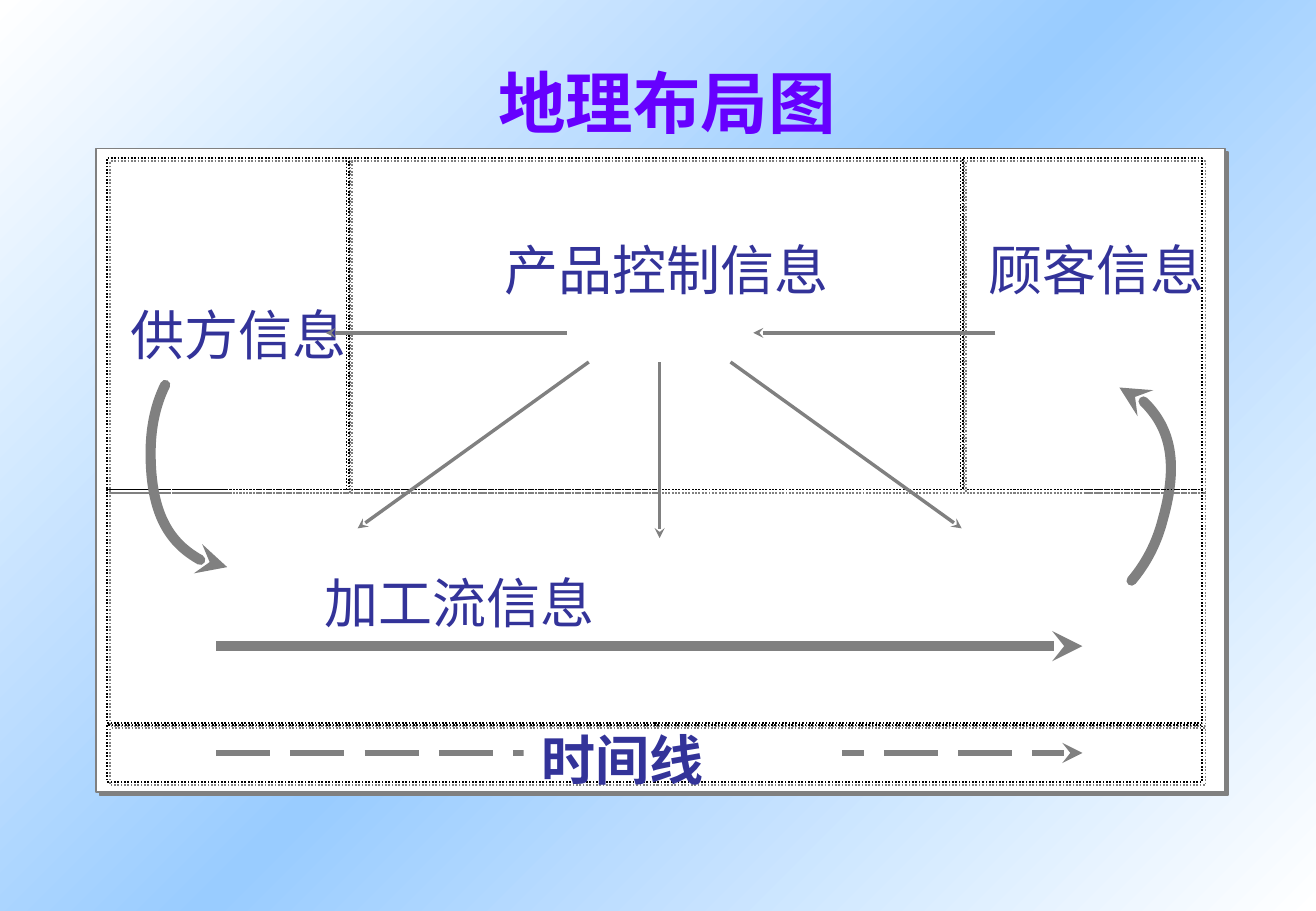
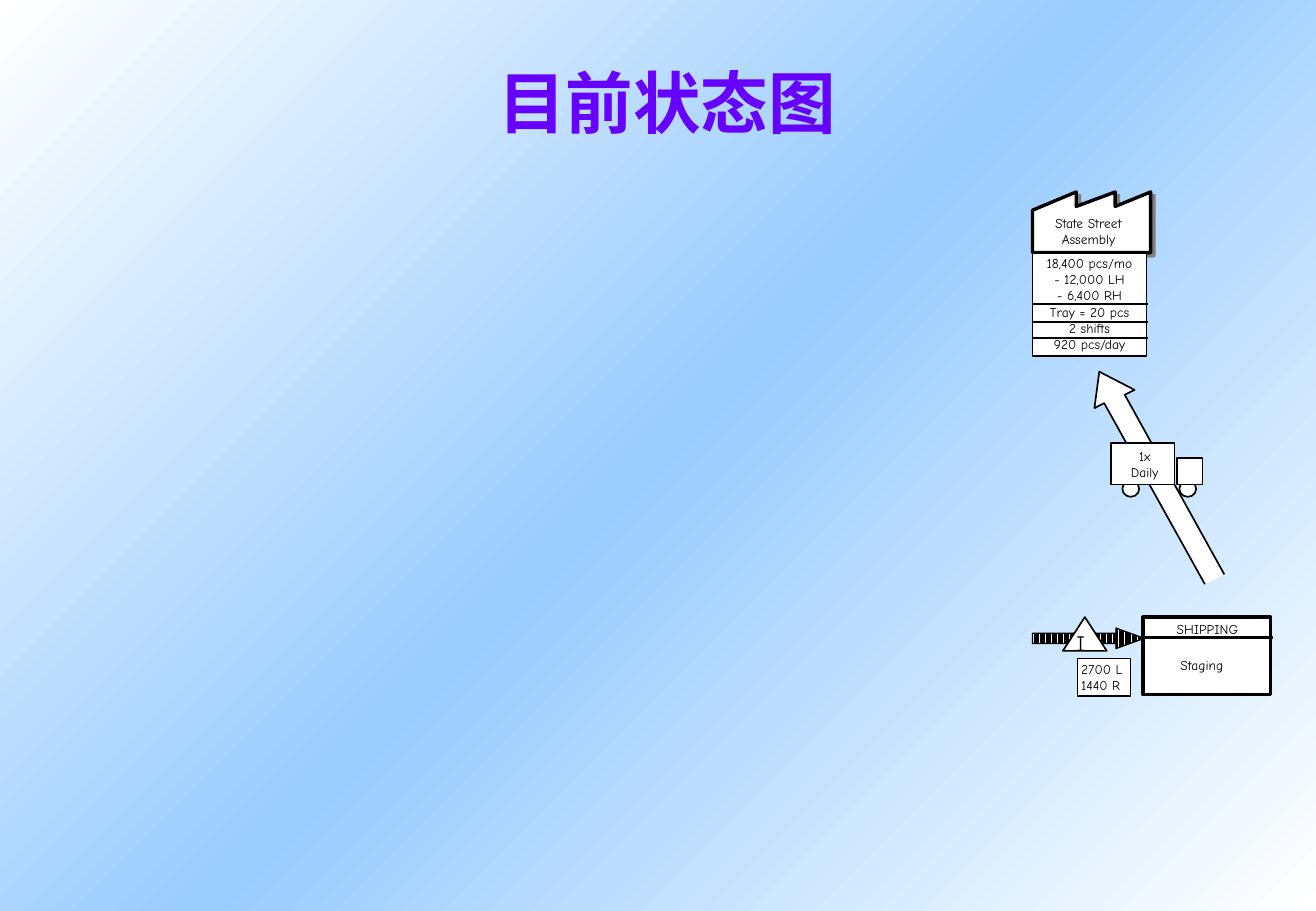
from copy import deepcopy

from lxml.etree import SubElement
from pptx import Presentation
from pptx.dml.color import RGBColor
from pptx.enum.dml import MSO_LINE, MSO_PATTERN
from pptx.enum.shapes import MSO_CONNECTOR, MSO_SHAPE
from pptx.enum.text import MSO_ANCHOR, PP_ALIGN
from pptx.oxml.ns import qn
from pptx.util import Pt

COLORS = {
    "title": "6600FF", "label": "333399", "black": "000000",
    "white": "FFFFFF", "gray": "808080", "sky": "99CCFF",
}
TITLE_FONT, BODY_FONT = "Arial", "Comic Neue"
SMALL = (2.2, 1.4)
FRAME_BOX = (57, 88, 669, 381.5)
FACTORY_BOX = (612, 113.8, 70, 97)
DELIVERY_BOX = (648.7, 220.3, 77, 126)
SHIPPING_BOX = (612, 365.8, 142, 46)


def rgb(name):
    return RGBColor.from_string(COLORS[name])


def points(values):
    return [Pt(value) for value in values]


def inside(box, x, y, *size):
    """Shift a position given relative to box onto the page."""
    return (box[0] + x, box[1] + y, *size)


def outline(shape, color, weight, dash=None):
    shape.line.color.rgb = rgb(color)
    shape.line.width = Pt(weight)
    if dash:
        shape.line.dash_style = dash


def add_tip(shape):
    """Put a stealth arrowhead on the end of a line."""
    SubElement(shape._element.spPr.find(qn("a:ln")), qn("a:tailEnd"), type="stealth")


def finish(shape, fill, line, weight, dash=None, shadow=False):
    """Set fill, outline and shadow of a shape."""
    if fill:
        shape.fill.solid()
        shape.fill.fore_color.rgb = rgb(fill)
    else:
        shape.fill.background()
    if line:
        outline(shape, line, weight, dash)
    else:
        shape.line.fill.background()
    shape.shadow.inherit = False
    if shadow:
        effects = shape._element.spPr.find(qn("a:effectLst"))
        outer = SubElement(effects, qn("a:outerShdw"), dist=str(Pt(2.8)),
                           dir="2700000", algn="ctr", rotWithShape="0")
        SubElement(outer, qn("a:srgbClr"), val=COLORS["gray"])
    return shape


def add_preset(page, box, kind=MSO_SHAPE.RECTANGLE, fill="white", line="black",
               weight=1.0, **style):
    shape = page.shapes.add_shape(kind, *points(box))
    return finish(shape, fill, line, weight, **style)


def add_outline(page, box, corners, closed=True):
    """Build a freeform from corners given relative to box."""
    start, *rest = [tuple(points(inside(box, *corner))) for corner in corners]
    builder = page.shapes.build_freeform(*start, scale=1.0)
    builder.add_line_segments(rest, close=closed)
    return builder.convert_to_shape()


def add_curved_arrow(page, box, controls):
    """Draw a Bezier arrow; controls hold a start and three points per curve."""
    shape = finish(add_outline(page, box, controls, closed=False), None, "gray", 6)
    track = shape._element.find(".//" + qn("a:path"))
    steps = track.findall(qn("a:lnTo"))
    for first in range(0, len(steps), 3):
        curve = SubElement(track, qn("a:cubicBezTo"))
        for step in steps[first:first + 3]:
            curve.append(step[0])
            track.remove(step)
    shape._element.spPr.find(qn("a:ln")).set("cap", "rnd")
    add_tip(shape)


def add_line(page, box, start, end, color="black", weight=1.0, dash=None, tip=False):
    line = page.shapes.add_connector(
        MSO_CONNECTOR.STRAIGHT, *points(inside(box, *start) + inside(box, *end)))
    outline(line, color, weight, dash)
    if tip:
        add_tip(line)
    SubElement(line._element.spPr, qn("a:effectLst"))


def write(shape, text, size=8, color="black", font=BODY_FONT, bold=False,
          align=PP_ALIGN.CENTER, insets=SMALL, left=None, wrap=False,
          anchor=MSO_ANCHOR.TOP):
    frame = shape.text_frame
    frame.text = text
    frame.word_wrap = wrap
    frame.vertical_anchor = anchor
    frame.margin_left = Pt(insets[0] if left is None else left)
    frame.margin_right = Pt(insets[0])
    frame.margin_top = frame.margin_bottom = Pt(insets[1])
    for para in frame.paragraphs:
        para.alignment = align
        for span in para.runs:
            span.font.name = font
            span.font.size = Pt(size)
            span.font.bold = bold
            span.font.color.rgb = rgb(color)


def add_text(page, box, text, **style):
    write(page.shapes.add_textbox(*points(box)), text, **style)


def add_label(page, box, text, bold=False):
    """Write the large name of a region."""
    add_text(page, box, text, size=32, color="label", bold=bold,
             align=PP_ALIGN.LEFT, insets=(7.2, 3.6), left=15.2)


def style_master(deck):
    """Give every slide the diagonal sky gradient."""
    fill = deck.slide_master.background.fill
    fill.gradient()
    fill.gradient_angle = 315
    stop_list = deck.slide_master.element.find(".//" + qn("a:gsLst"))
    stop_list.insert(1, deepcopy(stop_list[0]))
    for stop, position, name in zip(fill.gradient_stops, (0, 0.5, 1),
                                    ("white", "sky", "white")):
        stop.position = position
        stop.color.rgb = rgb(name)


def add_page(deck, title):
    page = deck.slides.add_slide(deck.slide_layouts[5])
    holder = page.shapes.title
    holder.left, holder.top, holder.width, holder.height = points((30, 15, 720, 90))
    write(holder, title, size=40, color="title", font=TITLE_FONT, bold=True,
          insets=(7.2, 3.6), left=18, wrap=True, anchor=MSO_ANCHOR.MIDDLE)
    return page


def add_panel(page, box):
    add_preset(page, box, fill=None, dash=MSO_LINE.ROUND_DOT, shadow=True)


def supplier_panel(page, box):
    add_panel(page, box)
    add_label(page, inside(box, -1.5, 81.5, 152, 45), "供方信息")
    add_curved_arrow(page, box, [
        (34.6, 134.6), (28.8, 146.2), (25.9, 159.8), (25.9, 175),
        (25.9, 212.4), (46.1, 242.6), (71.3, 242.6)])


def customer_panel(page, box):
    add_panel(page, box)
    add_label(page, inside(box, 0, 43.2, 152, 45), "顾客信息")
    add_curved_arrow(page, box, [
        (100.1, 250.6), (108.7, 240.5), (115.2, 228.2), (118.8, 213.8),
        (128.9, 177.8), (117.4, 142.6), (92.9, 136.1)])


def control_panel(page, box):
    add_panel(page, box)
    add_label(page, inside(box, 77, 43.2, 216, 45), "产品控制信息")
    axis, level, top = 184.3, 103.7, 121
    arrows = [((axis - 55, level), (axis - 198, level)),
              ((axis + 199, level), (axis + 55.5, level)),
              ((axis, top), (axis, 225.4))]
    arrows += [((axis + side * 42, top), (axis + side * 179, 219.6)) for side in (-1, 1)]
    for start, end in arrows:
        add_line(page, box, start, end, "gray", 2, tip=True)


def flow_panel(page, box):
    add_panel(page, box)
    add_label(page, inside(box, 114, 44, 184, 45), "加工流信息")
    add_line(page, box, (64.8, 92.8), (578.2, 92.8), "gray", 6, tip=True)


def timeline_panel(page, box):
    add_panel(page, box)
    add_line(page, box, (64.8, 16.6), (578.2, 16.6), "gray", 4,
             dash=MSO_LINE.LONG_DASH, tip=True)
    add_preset(page, inside(box, 247, 10.8, 188.6, 11.5), line=None)
    add_label(page, inside(box, 242.6, -2.8, 124.6, 45), "时间线", bold=True)


def layout_map(page, box):
    """Frame with three panels above two full-width ones."""
    add_preset(page, box, line="gray", shadow=True)
    margin, side, gap = 6.4, 142, 1.3
    upper, middle, lower = 196.6, 138.2, 33.8
    width = box[2] - 2 * margin - 7
    centre = width - 2 * (side + gap)
    left, top = margin, 5.6
    customer_panel(page, inside(box, left + width - side, top, side, upper))
    flow_panel(page, inside(box, left, top + upper, width, middle))
    supplier_panel(page, inside(box, left, top, side, upper))
    control_panel(page, inside(box, left + side + gap, top, centre, upper))
    timeline_panel(page, inside(box, left, top + upper + middle + gap, width, lower))


def factory(page, box):
    roof = add_outline(page, box, [
        (0, 36), (0, 10.8), (25.9, 0), (25.9, 8.6),
        (49, 0), (49, 8.6), (70, 0), (70, 36)])
    finish(roof, "white", "black", 2, shadow=True)
    name = add_preset(page, inside(box, 5.8, 12.2, 54.7, 21.6), line=None)
    write(name, "State Street\nAssembly")
    demand = add_preset(page, inside(box, 0, 36, 67.7, 61.2))
    write(demand, "18,400 pcs/mo\n- 12,000 LH\n- 6,400 RH\n"
                  "Tray = 20 pcs\n2 shifts\n920 pcs/day", wrap=True)
    for y in (66.2, 77, 86.4):
        add_line(page, box, (0, y), (68.4, y))


def truck(page, box):
    for x in (40.3, 6.5):
        add_preset(page, inside(box, x, 22.3, 10, 9.4), MSO_SHAPE.OVAL)
    add_preset(page, inside(box, 0, 0, 37.4, 24.5))
    add_preset(page, inside(box, 38.9, 8.6, 15.1, 15.8))
    rate = add_preset(page, inside(box, 7.9, 1.4, 23.8, 21.6), line=None)
    write(rate, "1x\nDaily")


def delivery(page, box):
    arrow = add_outline(page, box, [
        (65.5, 126), (5.8, 18.7), (0, 21.6), (2.9, 0),
        (23.8, 10.8), (18, 13.7), (77, 120.2)], closed=False)
    finish(arrow, "white", "black", 1)
    truck(page, inside(box, 10, 42.5, 54, 32))


def shipping(page, box):
    push = add_preset(page, inside(box, 0, 6.5, 66.2, 12.2), MSO_SHAPE.RIGHT_ARROW,
                      weight=0.75)
    push.adjustments[1] = 1.375
    push.fill.patterned()
    push.fill.pattern = MSO_PATTERN.DARK_VERTICAL
    push.fill.fore_color.rgb = rgb("black")
    push.fill.back_color.rgb = rgb("white")
    add_preset(page, inside(box, 65.5, 0, 75.6, 46), weight=2)
    add_text(page, inside(box, 68.4, 0.7, 70.6, 12.2), "SHIPPING", wrap=True)
    add_line(page, box, (64.8, 12.2), (142.6, 12.2), weight=2)
    add_preset(page, inside(box, 18, 0, 26, 20), MSO_SHAPE.ISOSCELES_TRIANGLE)
    add_text(page, inside(box, 23.8, 5.8, 12.2, 18), "I", size=13, align=PP_ALIGN.LEFT)
    stock = add_preset(page, inside(box, 26.6, 24.5, 31.7, 22.3), weight=0.75)
    write(stock, "2700 L\n1440 R", align=PP_ALIGN.LEFT)
    add_text(page, inside(box, 80.6, 20.2, 43.2, 16.6), "Staging",
             align=PP_ALIGN.LEFT, insets=(7.2, 3.6))


def main():
    deck = Presentation()
    deck.slide_width, deck.slide_height = points((780, 540))
    style_master(deck)
    layout_map(add_page(deck, "地理布局图"), FRAME_BOX)
    state_page = add_page(deck, "目前状态图")
    shipping(state_page, SHIPPING_BOX)
    delivery(state_page, DELIVERY_BOX)
    factory(state_page, FACTORY_BOX)
    deck.save("out.pptx")


if __name__ == "__main__":
    main()
